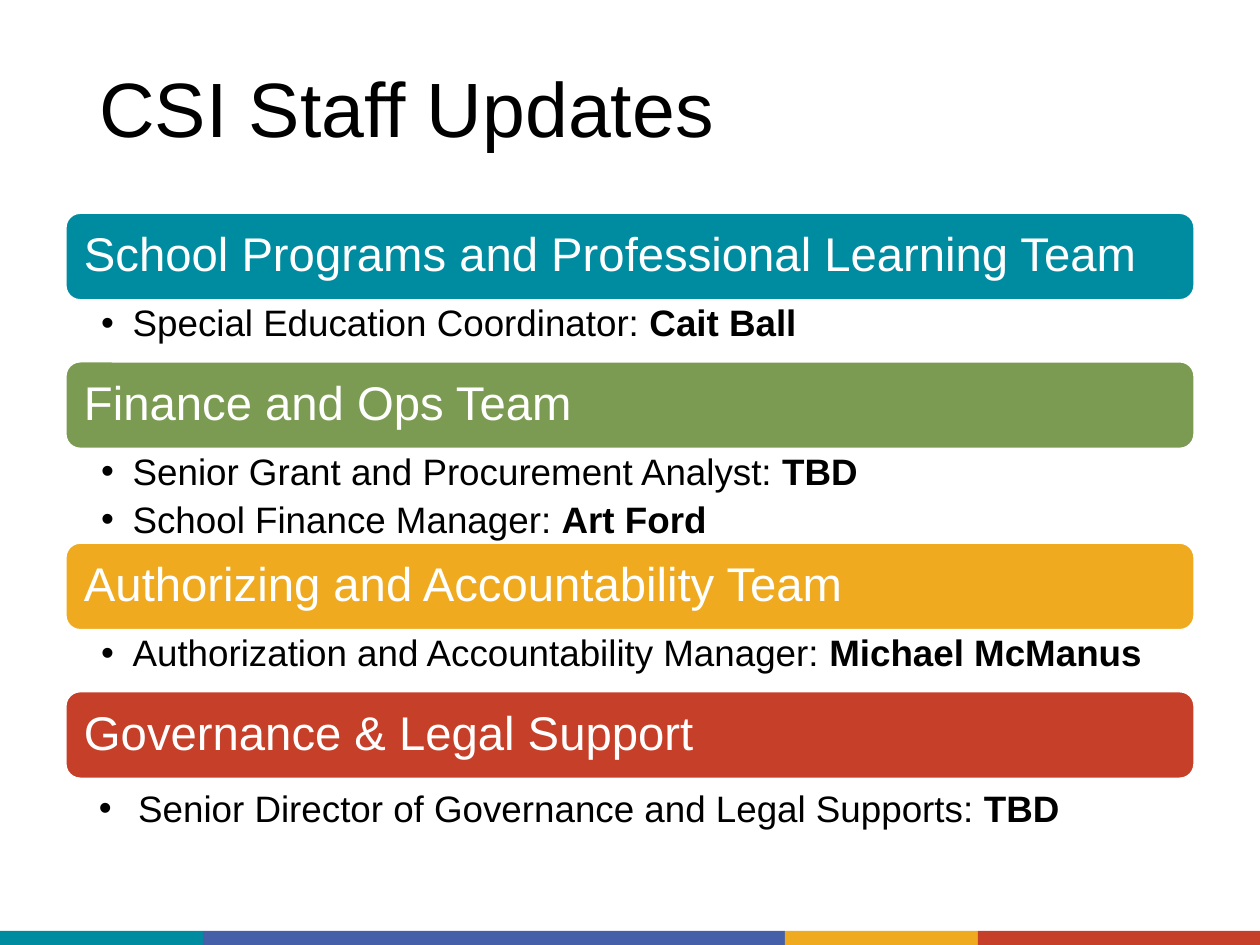
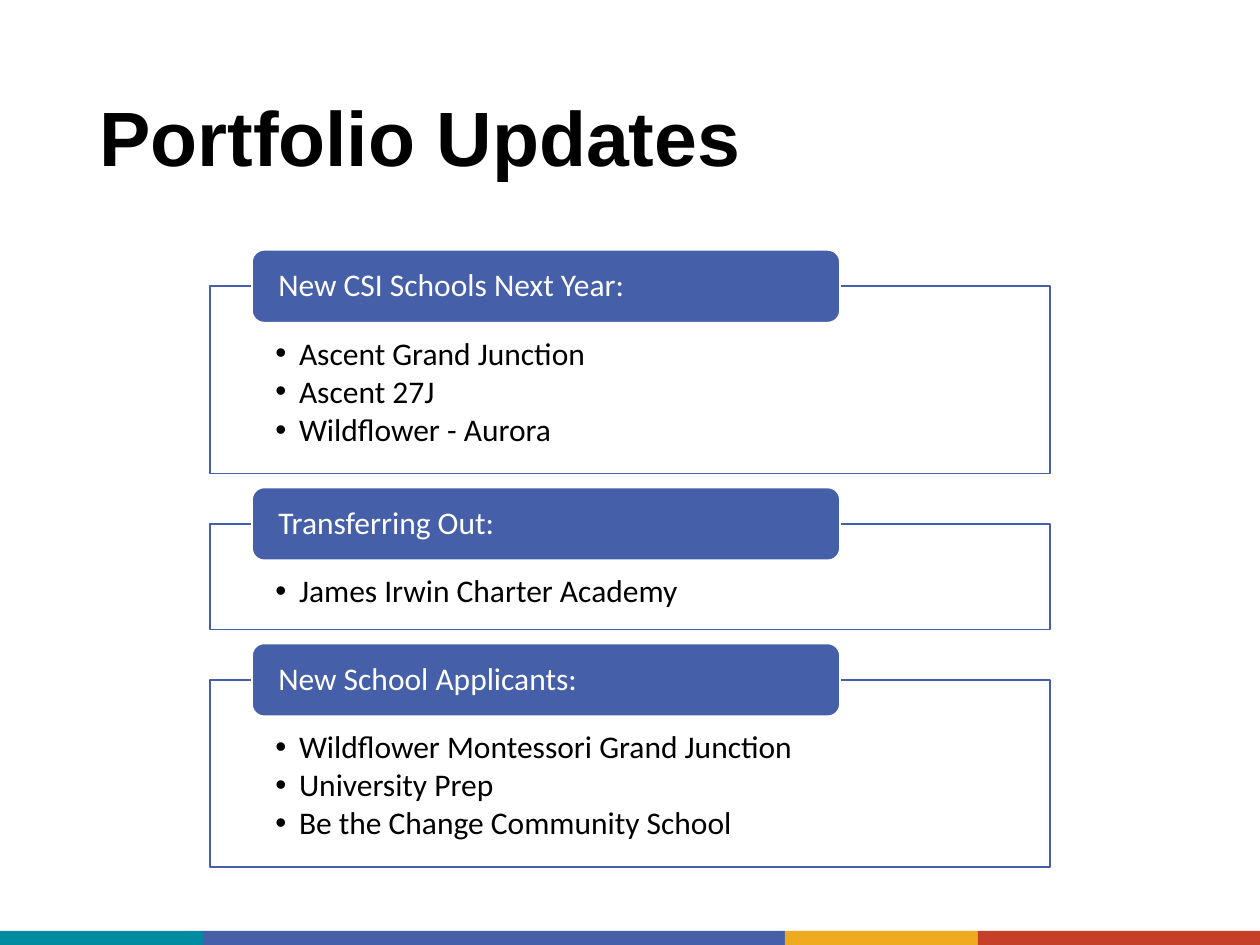
from lxml import etree
from pptx import Presentation
from pptx.dml.color import RGBColor
from pptx.enum.shapes import MSO_SHAPE
from pptx.enum.text import MSO_ANCHOR, PP_ALIGN
from pptx.oxml.ns import qn
from pptx.util import Pt

RECTANGLE, ROUNDED = MSO_SHAPE.RECTANGLE, MSO_SHAPE.ROUNDED_RECTANGLE
TOP, MIDDLE = MSO_ANCHOR.TOP, MSO_ANCHOR.MIDDLE
LEFT = PP_ALIGN.LEFT

# Shared colours and text styles
TEAL, BLUE, GREEN = "008CA0", "455FA9", "7C9B52"
GOLD, RED, WHITE, BLACK = "EFAA1F", "C63F28", "FFFFFF", "000000"


def add_block(page, kind, left, top, width, height, fill, line=None):
    block = page.shapes.add_shape(kind, Pt(left), Pt(top), Pt(width), Pt(height))
    block.shadow.inherit = False
    block.fill.solid()
    block.fill.fore_color.rgb = RGBColor.from_string(fill)
    if line:
        block.line.color.rgb = RGBColor.from_string(line)
        block.line.width = Pt(1)
    else:
        block.line.fill.background()
    return block


def write_text(box, lines, style):
    """Each line is a tuple of a plain part and, optionally, a bold part."""
    frame = box.text_frame
    frame.word_wrap = True
    frame.vertical_anchor = style["anchor"]
    sides = ("margin_left", "margin_top", "margin_right", "margin_bottom")
    for side, inset in zip(sides, style["insets"]):
        setattr(frame, side, Pt(inset))
    for number, parts in enumerate(lines):
        para = frame.add_paragraph() if number else frame.paragraphs[0]
        if "indent" in style:
            properties = para._p.get_or_add_pPr()
            properties.set("marL", str(Pt(style["indent"])))
            properties.set("indent", str(-Pt(style["indent"])))
            etree.SubElement(properties, qn("a:buFont")).set("typeface", "Arial")
            etree.SubElement(properties, qn("a:buChar")).set("char", "•")
        para.alignment = LEFT
        for name, value in style["paragraph"].items():
            setattr(para, name, value)
        for position, words in enumerate(parts):
            span = para.add_run()
            span.text = words
            span.font.color.rgb = RGBColor.from_string(style["color"])
            for name, value in style["font"].items():
                setattr(span.font, name, value)
            if position:
                span.font.bold = True


TITLE = {
    "anchor": MIDDLE, "insets": (7.2, 3.6, 7.2, 3.6), "color": BLACK,
    "paragraph": {"line_spacing": 0.9},
    "font": {"name": "Arial", "size": Pt(44)},
}
TEAM = {
    "anchor": MIDDLE, "insets": (8, 8, 8, 8), "color": WHITE,
    "paragraph": {"line_spacing": 0.9},
    "font": {"name": "Arial", "size": Pt(27)},
}
STAFF = {
    "anchor": TOP, "insets": (20.2, 2.9, 15.1, 2.9), "color": BLACK, "indent": 18,
    "paragraph": {"line_spacing": 0.9, "space_after": Pt(4.8)},
    "font": {"name": "Arial", "size": Pt(21)},
}
LAST_STAFF = {
    **STAFF, "insets": (7.2, 3.6, 7.2, 3.6), "indent": 22.5,
    "paragraph": {"line_spacing": 1.0},
}
TAB = {
    "anchor": MIDDLE, "insets": (13, 0, 13, 0), "color": WHITE,
    "paragraph": {"line_spacing": 0.9},
    "font": {"name": "Calibri", "size": Pt(18)},
}
SCHOOLS = {
    "anchor": TOP, "insets": (37.4, 29.5, 37.4, 10), "color": BLACK, "indent": 13.5,
    "paragraph": {"line_spacing": 0.9, "space_after": Pt(2.3)},
    "font": {"name": "Calibri", "size": Pt(18)},
}

deck = Presentation()
deck.slide_width, deck.slide_height = Pt(720), Pt(540)

# Title and footer band of every slide
BAND_STARTS = (0, 116, 448.5, 558.8, 720)
BAND_COLORS = (TEAL, BLUE, GOLD, RED)
pages = []
for heading, height, bold in (("CSI Staff Updates", 71.3, False),
                              ("Portfolio Updates", 104.4, True)):
    page = deck.slides.add_slide(deck.slide_layouts[5])
    pages.append(page)
    for start, end, color in zip(BAND_STARTS, BAND_STARTS[1:], BAND_COLORS):
        add_block(page, RECTANGLE, start, 532, end - start, 8, color)
    title = page.shapes.title
    title.left, title.top, title.width, title.height = Pt(49.5), Pt(28.8), Pt(621), Pt(height)
    write_text(title, [(heading,)], {**TITLE, "font": {**TITLE["font"], "bold": bold}})

# Slide 1: team bars with the staff listed below each
staff_page = pages[0]
BAR_LEFT, BAR_WIDTH, BAR_HEIGHT = 37.6, 644.8, 49.6
teams = [
    ("School Programs and Professional Learning Team", TEAL, 35.3,
     [("Special Education Coordinator: ", "Cait Ball")]),
    ("Finance and Ops Team", GREEN, 54,
     [("Senior Grant and Procurement Analyst: ", "TBD"),
      ("School Finance Manager: ", "Art Ford")]),
    ("Authorizing and Accountability Team", GOLD, 35.3,
     [("Authorization and Accountability Manager: ", "Michael McManus")]),
    ("Governance & Legal Support", RED, 0, []),
]
top = 121.8
for team, color, list_height, staff in teams:
    bar = add_block(staff_page, ROUNDED, BAR_LEFT, top, BAR_WIDTH, BAR_HEIGHT, color, WHITE)
    write_text(bar, [(team,)], TEAM)
    top += BAR_HEIGHT
    if staff:
        box = staff_page.shapes.add_textbox(Pt(BAR_LEFT), Pt(top), Pt(BAR_WIDTH), Pt(list_height))
        write_text(box, staff, STAFF)
    top += list_height

box = staff_page.shapes.add_textbox(Pt(49.4), Pt(445.7), Pt(642), Pt(32.5))
write_text(box, [("Senior Director of Governance and Legal Supports: ", "TBD")], LAST_STAFF)

# Slide 2: outlined school lists, each with a tab over its top edge
portfolio_page = pages[1]
PANEL_GAP, TAB_RISE = 28.7, 20.8
groups = [
    ("New CSI Schools Next Year:", 107.1,
     ["Ascent Grand Junction", "Ascent 27J", "Wildflower - Aurora"]),
    ("Transferring Out:", 60.4, ["James Irwin Charter Academy"]),
    ("New School Applicants:", 107.1,
     ["Wildflower Montessori Grand Junction", "University Prep",
      "Be the Change Community School"]),
]
top = 163.6
for label, panel_height, schools in groups:
    panel = add_block(portfolio_page, RECTANGLE, 120, top, 480, panel_height, WHITE, BLUE)
    panel_color = panel.fill._xPr.find(qn("a:solidFill"))[0]
    etree.SubElement(panel_color, qn("a:alpha")).set("val", "90000")
    write_text(panel, [(school,) for school in schools], SCHOOLS)
    tab = add_block(portfolio_page, ROUNDED, 144, top - TAB_RISE, 336, 2 * TAB_RISE, BLUE, WHITE)
    write_text(tab, [(label,)], TAB)
    top += panel_height + PANEL_GAP

deck.save("out.pptx")
